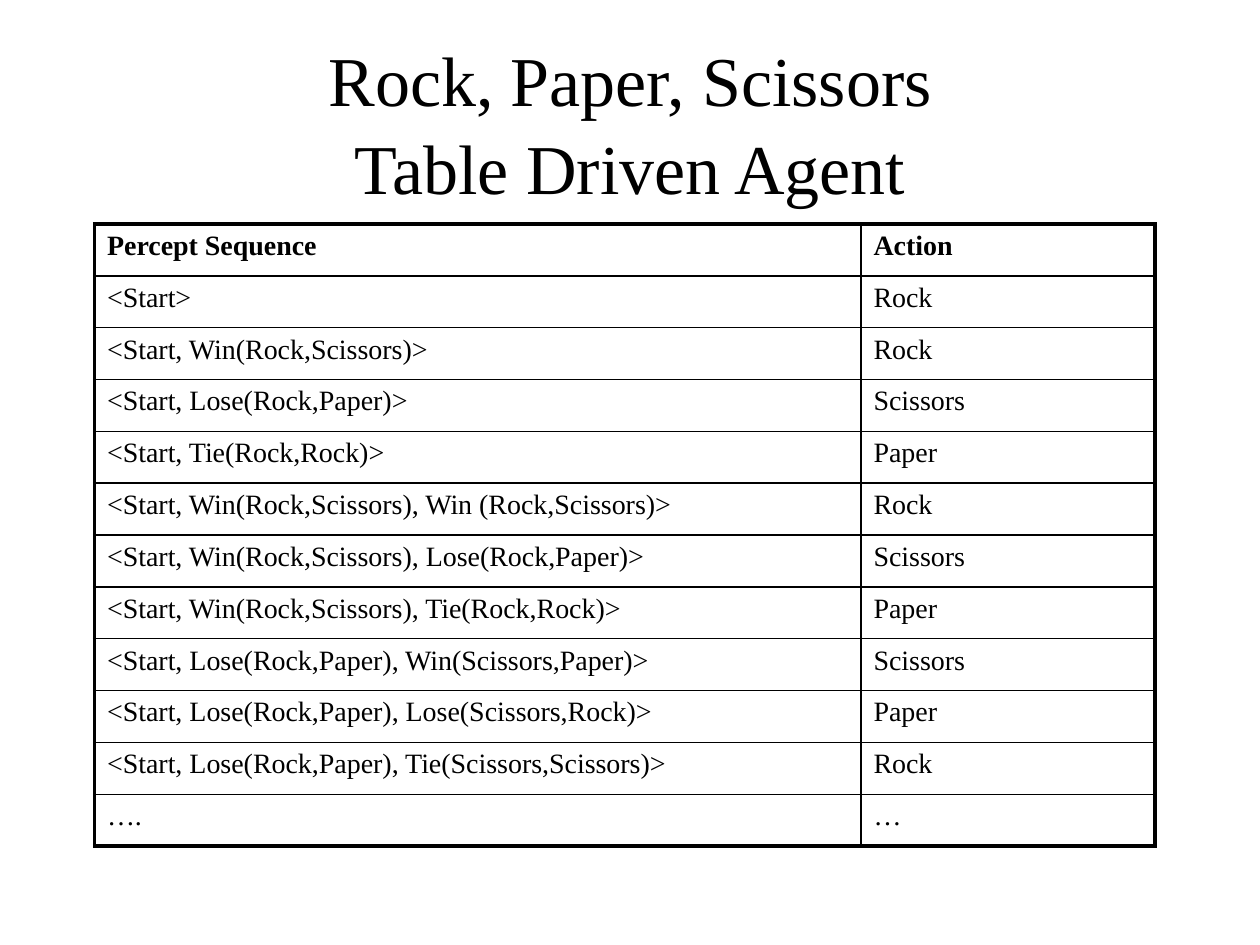
from lxml import etree
from pptx import Presentation
from pptx.dml.color import RGBColor
from pptx.enum import text
from pptx.oxml import ns
from pptx.util import Pt


def style(paragraph, size, color="000000", bold=False):
    for run in paragraph.runs:
        run.font.name = "Times New Roman"
        run.font.size = Pt(size)
        run.font.bold = bold
        run.font.color.rgb = RGBColor.from_string(color)


def add_border(cell, side, width, color="000000"):
    line = etree.SubElement(cell._tc.get_or_add_tcPr(), ns.qn(f"a:{side}"), w=str(Pt(width)))
    fill = etree.SubElement(line, ns.qn("a:solidFill"))
    etree.SubElement(fill, ns.qn("a:srgbClr"), val=color)


rules = [
    ("Percept Sequence", "Action"),
    ("<Start>", "Rock"),
    ("<Start, Win(Rock,Scissors)>", "Rock"),
    ("<Start, Lose(Rock,Paper)>", "Scissors"),
    ("<Start, Tie(Rock,Rock)>", "Paper"),
    ("<Start, Win(Rock,Scissors), Win (Rock,Scissors)>", "Rock"),
    ("<Start, Win(Rock,Scissors), Lose(Rock,Paper)>", "Scissors"),
    ("<Start, Win(Rock,Scissors), Tie(Rock,Rock)>", "Paper"),
    ("<Start, Lose(Rock,Paper), Win(Scissors,Paper)>", "Scissors"),
    ("<Start, Lose(Rock,Paper), Lose(Scissors,Rock)>", "Paper"),
    ("<Start, Lose(Rock,Paper), Tie(Scissors,Scissors)>", "Rock"),
    ("….", "…"),
]
column_widths = [438, 168]
row_height = 29.64

prs = Presentation()
prs.slide_width, prs.slide_height = Pt(720), Pt(540)
slide = prs.slides.add_slide(prs.slide_layouts[5])

title = slide.shapes.title
title.left, title.top, title.width, title.height = Pt(54), Pt(24), Pt(612), Pt(90)
title.text_frame.text = "Rock, Paper, Scissors\vTable Driven Agent"
title.text_frame.auto_size = text.MSO_AUTO_SIZE.NONE
title.text_frame.vertical_anchor = text.MSO_ANCHOR.MIDDLE
heading = title.text_frame.paragraphs[0]
heading.alignment = text.PP_ALIGN.CENTER
heading.line_spacing = 1.04
style(heading, 40)

agent_table = slide.shapes.add_table(
    len(rules), len(column_widths), Pt(54), Pt(128),
    Pt(sum(column_widths)), Pt(row_height * len(rules)),
).table
for column, width in zip(agent_table.columns, column_widths):
    column.width = Pt(width)
for row in agent_table.rows:
    row.height = Pt(row_height)

last_row, last_column = len(rules) - 1, len(column_widths) - 1
for r, rule in enumerate(rules):
    for c, wording in enumerate(rule):
        cell = agent_table.cell(r, c)
        cell.text_frame.text = wording
        entry = cell.text_frame.paragraphs[0]
        entry.space_before = Pt(3.2)
        style(entry, 16, bold=r == 0)
        outer_sides = {"lnL": c == 0, "lnR": c == last_column, "lnT": r == 0, "lnB": r == last_row}
        for side, is_outer in outer_sides.items():
            add_border(cell, side, 2.25 if is_outer else 1)
        cell.fill.background()

prs.save("out.pptx")
